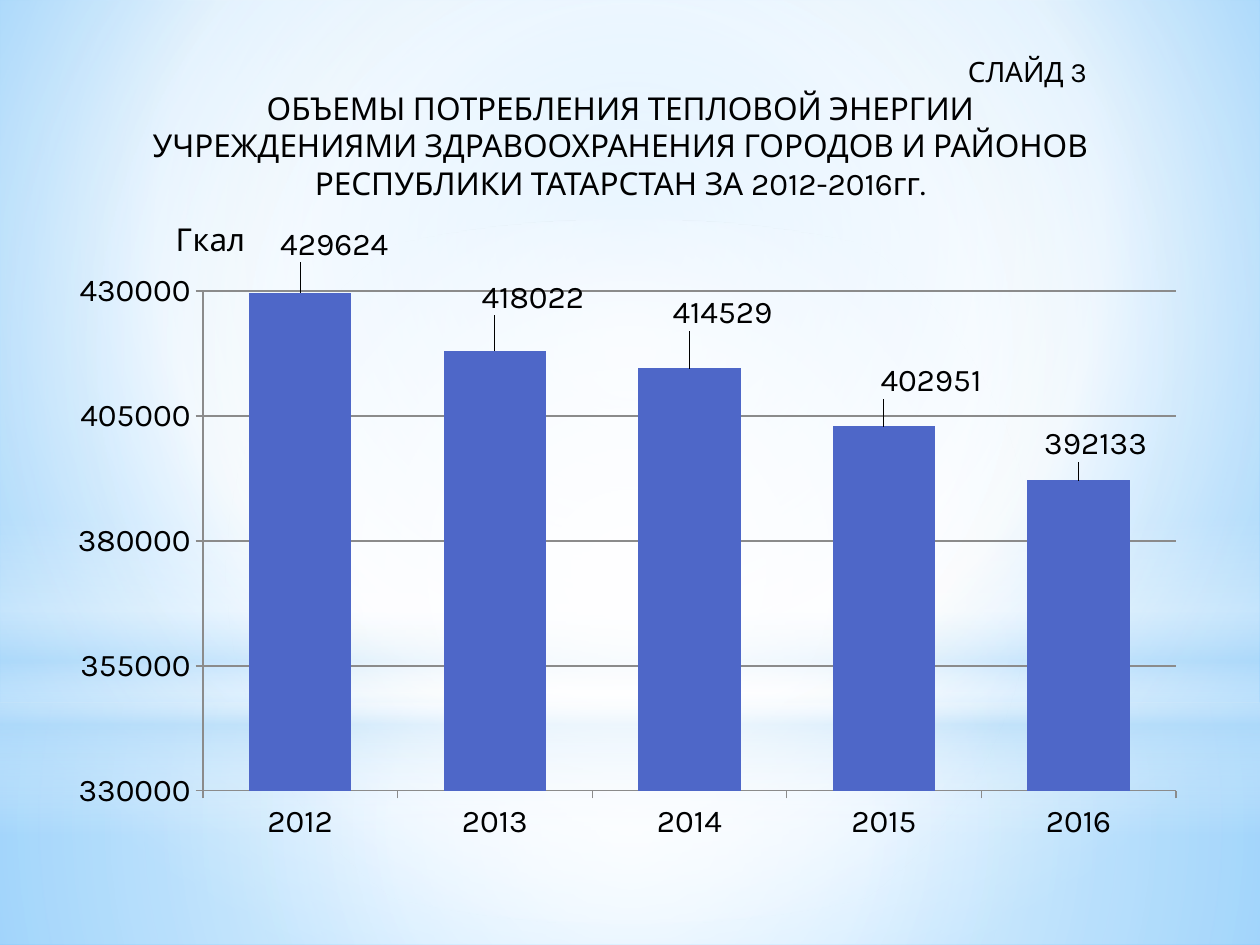
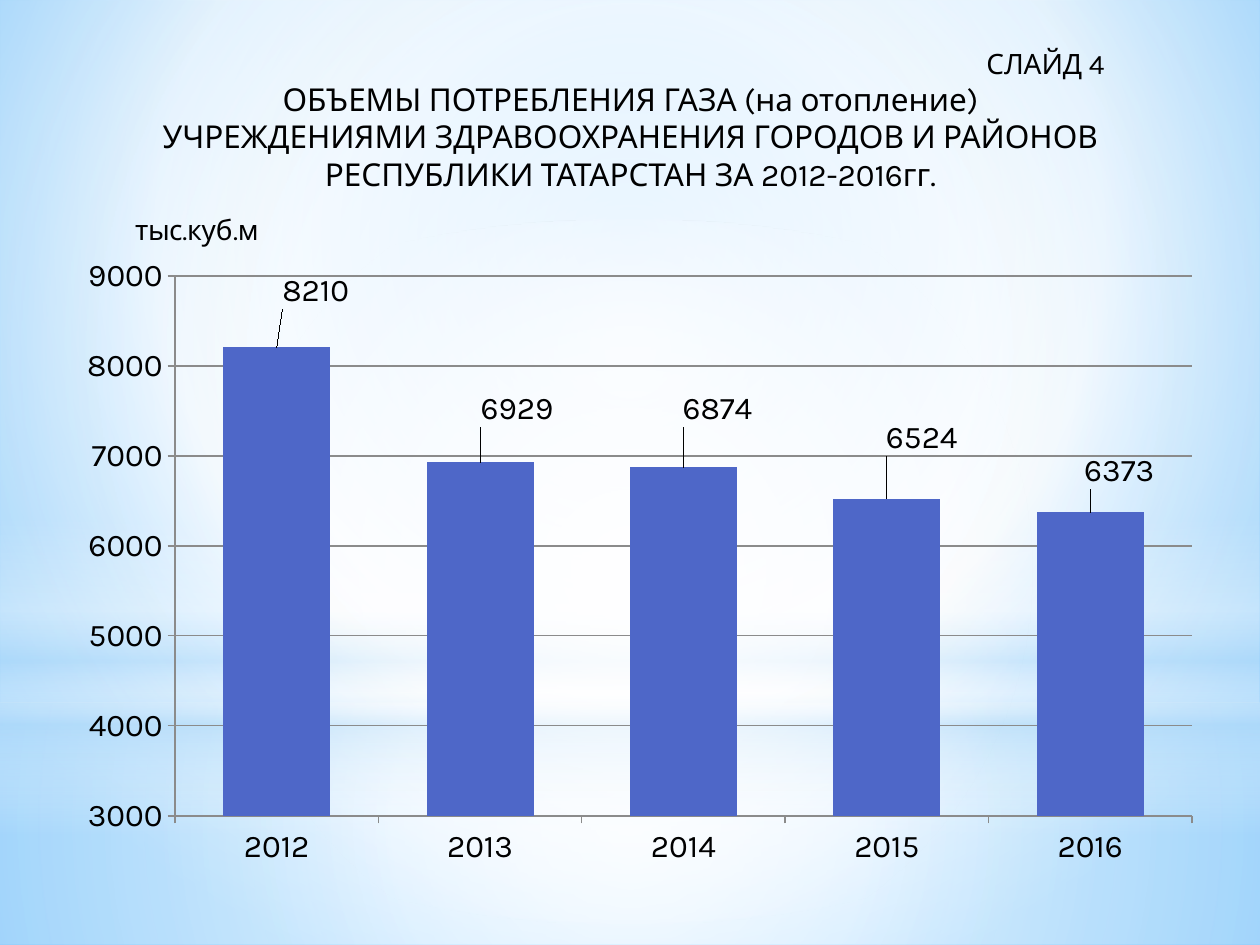
import lxml.etree as etree
import pptx
import pptx.chart.data
import pptx.dml.color
import pptx.enum.chart
import pptx.enum.shapes
import pptx.enum.text
import pptx.oxml.ns
import pptx.util

PX = 914400 / 126
FONT = "Karla"
COLORS = {"text": "000000", "bar": "4E67C8", "line": "8B8B8B", "white": "FFFFFF",
          "haze": "B4DCFA", "sky": "9ED5FF", "deep": "5BB9FF"}
CENTRE = (50, 50, 50, 50)
YEARS = ["2012", "2013", "2014", "2015", "2016"]
SHAPES = pptx.enum.shapes.MSO_SHAPE

# Shared backdrop: stops are (position, colour, opacity), all in percent
SKY = [(0, "sky", 100), (60, "white", 100), (100, "deep", 100)]
BANDS = [
    (SHAPES.RECTANGLE, (0, 703, 1260, 242),
     [(0, "white", 91), (37, "white", 76), (100, "haze", 79)], CENTRE),
    (SHAPES.RECTANGLE, (0, 0, 1260, 703),
     [(0, "white", 89), (48, "white", 62), (100, "haze", 79)], CENTRE),
    (SHAPES.RECTANGLE, (0, 519, 1260, 315),
     [(0, "white", 0), (29, "white", 30), (45, "haze", 40),
      (55, "white", 26), (65, "haze", 60), (100, "white", 0)], None),
    (SHAPES.OVAL, (0, 220, 1260, 703),
     [(0, "white", 100), (56, "white", 0)], CENTRE),
]

# Content: label shifts and frames are in px
PAGES = [
    {
        "number": "СЛАЙД 3", "subject": "ОБЪЕМЫ ПОТРЕБЛЕНИЯ ТЕПЛОВОЙ ЭНЕРГИИ",
        "title_frame": (35, 45, 1171, 165), "number_indent": 814,
        "chart_frame": (64, 195, 1131, 655), "plot_frame": (203, 291, 973, 500),
        "unit": "Гкал", "unit_size": 18, "unit_at": (170, 213),
        "values": [429624, 418022, 414529, 402951, 392133],
        "scale": (330000, 430000, 25000),
        "shifts": [(34, -25), (38, -30), (33, -32), (47, -22), (17, -13)],
    },
    {
        "number": "СЛАЙД 4", "subject": "ОБЪЕМЫ ПОТРЕБЛЕНИЯ ГАЗА (на отопление)",
        "title_frame": (35, 36, 1191, 165), "number_indent": 830,
        "chart_frame": (64, 175, 1150, 704), "plot_frame": (175, 276, 1017, 540),
        "unit": "тыс.куб.м", "unit_size": 16, "unit_at": (130, 207),
        "values": [8210, 6929, 6874, 6524, 6373],
        "scale": (3000, 9000, 1000),
        "shifts": [(39, -33), (37, -30), (34, -35), (35, -37), (29, -18)],
    },
]
INSTITUTIONS = ["УЧРЕЖДЕНИЯМИ ЗДРАВООХРАНЕНИЯ ГОРОДОВ И РАЙОНОВ",
                "РЕСПУБЛИКИ ТАТАРСТАН ЗА 2012-2016гг."]


def qn(tag):
    return pptx.oxml.ns.qn(tag)


def emu(*lengths):
    return [round(length * PX) for length in lengths]


def rgb(name):
    return pptx.dml.color.RGBColor.from_string(COLORS[name])


def apply(target, values):
    for name, value in values.items():
        setattr(target, name, value)


def add_node(parent, tag, **attributes):
    return etree.SubElement(parent, qn(tag), {k: str(v) for k, v in attributes.items()})


def set_gradient(fill, element, stops, focus):
    """Fill with a circular gradient round focus, or a downward one without it."""
    fill.gradient()
    gradient = element.find(".//" + qn("a:gradFill"))
    for child in list(gradient):
        gradient.remove(child)
    stop_list = add_node(gradient, "a:gsLst")
    for position, color, opacity in stops:
        stop = add_node(stop_list, "a:gs", pos=position * 1000)
        tint = add_node(stop, "a:srgbClr", val=COLORS[color])
        if opacity < 100:
            add_node(tint, "a:alpha", val=opacity * 1000)
    if focus:
        circle = add_node(gradient, "a:path", path="circle")
        add_node(circle, "a:fillToRect", **{k: v * 1000 for k, v in zip("ltrb", focus)})
    else:
        add_node(gradient, "a:lin", ang=5400000, scaled=0)


def set_layout(parent, index, **values):
    """Give a chart part a manual layout."""
    layout = parent.find(qn("c:layout"))
    if layout is None:
        layout = etree.Element(qn("c:layout"))
        parent.insert(index, layout)
    for child in list(layout):
        layout.remove(child)
    manual = add_node(layout, "c:manualLayout")
    for tag, value in values.items():
        add_node(manual, "c:" + tag, val=value)


class Painter:
    def __init__(self, deck):
        self.deck = deck
        self.page = None

    def style_font(self, font, size):
        apply(font, {"name": FONT, "size": pptx.util.Pt(size), "bold": False})
        font.color.rgb = rgb("text")

    def new_page(self):
        self.page = self.deck.slides.add_slide(self.deck.slide_layouts[6])
        set_gradient(self.page.background.fill, self.page.element, SKY, (20, 10, 20, 60))
        for kind, frame, stops, focus in BANDS:
            band = self.page.shapes.add_shape(kind, *emu(*frame))
            band.shadow.inherit = False
            band.line.fill.background()
            set_gradient(band.fill, band.element, stops, focus)

    def title(self, frame, number, indent, lines):
        box = self.page.shapes.add_textbox(*emu(*frame))
        apply(box.text_frame, {
            "word_wrap": True,
            "auto_size": pptx.enum.text.MSO_AUTO_SIZE.SHAPE_TO_FIT_TEXT})
        for order, line in enumerate([number] + lines):
            para = box.text_frame.paragraphs[0] if order == 0 else box.text_frame.add_paragraph()
            para.alignment = pptx.enum.text.PP_ALIGN.CENTER
            span = para.add_run()
            span.text = line
            self.style_font(span.font, 18 if order else 16)
        # The page number sits to the right, on a line as tall as the others
        first = box.text_frame.paragraphs[0]
        first.line_spacing = pptx.util.Pt(21.4)
        first._p.get_or_add_pPr().set("marL", str(emu(indent)[0]))

    def column_chart(self, content):
        left, top, width, height = content["chart_frame"]
        data = pptx.chart.data.CategoryChartData(number_format="0")
        data.categories = YEARS
        data.add_series("Series 1", content["values"])
        chart = self.page.shapes.add_chart(
            pptx.enum.chart.XL_CHART_TYPE.COLUMN_CLUSTERED,
            *emu(left, top, width, height), data).chart
        chart.has_legend = False
        self.style_font(chart.font, 18)

        # Unit above the value axis
        chart.has_title = True
        unit = chart.chart_title.text_frame.paragraphs[0].add_run()
        unit.text = content["unit"]
        self.style_font(unit.font, content["unit_size"])
        chart.chart_title.include_in_layout = False
        x, y = content["unit_at"]
        set_layout(chart.element.find(".//" + qn("c:title")), 1, xMode="edge", yMode="edge",
                   x=(x - left) / width, y=(y - top) / height)

        # Axes
        low, high, step = content["scale"]
        apply(chart.value_axis, {"minimum_scale": low, "maximum_scale": high,
                                 "major_unit": step, "has_major_gridlines": True})
        apply(chart.value_axis.tick_labels, {"number_format": "0",
                                             "number_format_is_linked": False})
        for axis in (chart.value_axis, chart.category_axis):
            apply(axis, {"major_tick_mark": pptx.enum.chart.XL_TICK_MARK.OUTSIDE,
                         "minor_tick_mark": pptx.enum.chart.XL_TICK_MARK.NONE})
        for part in (chart.value_axis, chart.category_axis, chart.value_axis.major_gridlines):
            part.format.line.color.rgb = rgb("line")
            part.format.line.width = pptx.util.Pt(0.75)

        # Bars
        plot = chart.plots[0]
        apply(plot, {"gap_width": 90, "vary_by_categories": False})
        series = plot.series[0]
        series.format.fill.solid()
        series.format.fill.fore_color.rgb = rgb("bar")
        x, y, w, h = content["plot_frame"]
        set_layout(chart.element.find(".//" + qn("c:plotArea")), 0,
                   layoutTarget="inner", xMode="edge", yMode="edge",
                   x=(x - left) / width, y=(y - top) / height, w=w / width, h=h / height)

        # Value labels, each moved off its bar
        series.data_labels.show_value = True
        for order in range(len(YEARS)):
            label = series.points[order].data_label
            label.position = pptx.enum.chart.XL_LABEL_POSITION.OUTSIDE_END
            self.style_font(label.font, 18)
        for node, (dx, dy) in zip(chart.element.iter(qn("c:dLbl")), content["shifts"]):
            set_layout(node, 1, x=dx / width, y=dy / height)


def main():
    deck = pptx.Presentation()
    deck.slide_width, deck.slide_height = emu(1260, 945)
    painter = Painter(deck)
    for content in PAGES:
        painter.new_page()
        painter.title(content["title_frame"], content["number"], content["number_indent"],
                      [content["subject"]] + INSTITUTIONS)
        painter.column_chart(content)
    deck.save("out.pptx")


if __name__ == "__main__":
    main()
